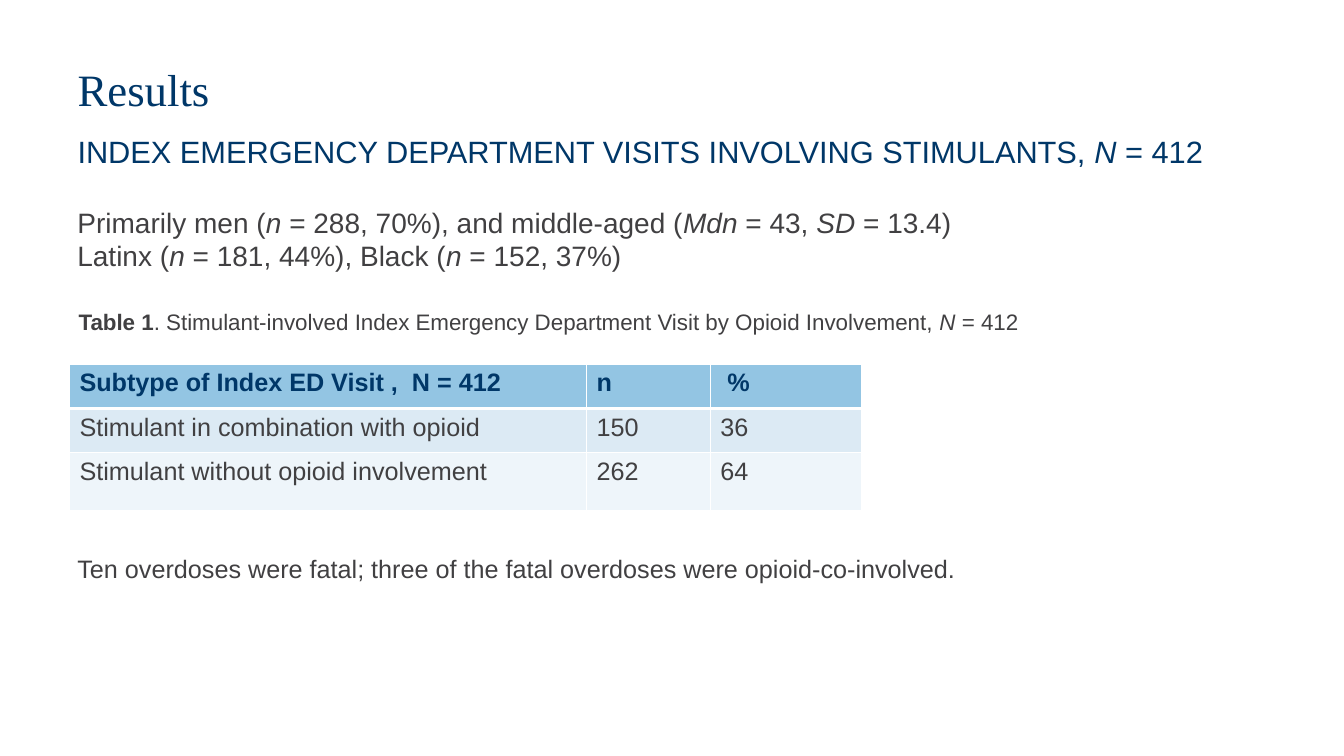
from lxml.etree import SubElement
from pptx import Presentation
from pptx.dml.color import RGBColor
from pptx.enum.text import MSO_ANCHOR, MSO_AUTO_SIZE, PP_ALIGN
from pptx.oxml.ns import qn
from pptx.util import Cm, Pt

COLORS = {
    "navy": "003768",
    "gray": "414042",
    "header": "93C5E3",
    "band_dark": "DCEAF4",
    "band_light": "EEF5FA",
    "border": "FFFFFF",
}
LEFT = 1.7
WIDTH = 30.48
COLUMN_WIDTHS = [13.03, 3.12, 3.81]
ROW_HEIGHTS = [1.12, 1.12, 1.45]
ROW_FILLS = ["header", "band_dark", "band_light"]
VISITS = [
    ["Subtype of Index ED Visit ,  N = 412", "n", " %"],
    ["Stimulant in combination with opioid", "150", "36"],
    ["Stimulant without opioid involvement", "262", "64"],
]


def rgb(name):
    return RGBColor.from_string(COLORS[name])


def style_font(font, size, color, face="Arial"):
    font.name = face
    font.size = Pt(size)
    font.color.rgb = rgb(color)


def place(shape, left, top, width, height):
    shape.left, shape.top = Cm(left), Cm(top)
    shape.width, shape.height = Cm(width), Cm(height)


def write_line(paragraph, marked, size, color):
    """Write one line in which asterisks enclose the italic parts."""
    for index, part in enumerate(marked.split("*")):
        if part:
            run = paragraph.add_run()
            run.text = part
            style_font(run.font, size, color)
            run.font.italic = index % 2 == 1


def add_title(slide, left, top, width, height):
    title = slide.shapes.title
    place(title, left, top, width, height)
    frame = title.text_frame
    frame.text = "Results"
    frame.auto_size = MSO_AUTO_SIZE.NONE
    frame.vertical_anchor = MSO_ANCHOR.MIDDLE
    heading = frame.paragraphs[0]
    heading.alignment = PP_ALIGN.LEFT
    heading.line_spacing = 0.8
    style_font(heading.runs[0].font, 32, "navy", "Times New Roman")


def add_subtitle(slide, left, top, width, height):
    subtitle = slide.placeholders[1]
    place(subtitle, left, top, width, height)
    frame = subtitle.text_frame
    frame.auto_size = MSO_AUTO_SIZE.NONE
    line = frame.paragraphs[0]
    properties = line._p.get_or_add_pPr()
    properties.set("marL", "0")
    properties.set("indent", "0")
    SubElement(properties, qn("a:buNone"))
    line.line_spacing = 0.8
    line.space_before = Pt(0)
    write_line(
        line,
        "INDEX EMERGENCY DEPARTMENT VISITS INVOLVING STIMULANTS, *N* = 412",
        22, "navy",
    )


def add_note(slide, left, top, width, height, lines, size):
    note = slide.shapes.add_textbox(Cm(left), Cm(top), Cm(width), Cm(height))
    frame = note.text_frame
    frame.word_wrap = True
    for index, line in enumerate(lines):
        paragraph = frame.add_paragraph() if index else frame.paragraphs[0]
        write_line(paragraph, line, size, "gray")
    return frame


def add_caption(slide, left, top, width, height):
    frame = add_note(
        slide, left, top, width, height,
        ["*Table 1*. Stimulant-involved Index Emergency Department Visit "
         "by Opioid Involvement, *N* = 412"],
        16,
    )
    label = frame.paragraphs[0].runs[0].font
    label.bold, label.italic = True, False


def set_borders(cell, widths):
    """Draw the cell's borders; widths maps L, R, T and B, in that order, to points."""
    properties = cell._tc.get_or_add_tcPr()
    for side, width in widths.items():
        line = SubElement(properties, qn(f"a:ln{side}"), w=str(Pt(width)))
        fill = SubElement(line, qn("a:solidFill"))
        SubElement(fill, qn("a:srgbClr"), val=COLORS["border"])


def add_visits_table(slide, left, top):
    table = slide.shapes.add_table(
        len(VISITS), len(COLUMN_WIDTHS), Cm(left), Cm(top),
        Cm(sum(COLUMN_WIDTHS)), Cm(sum(ROW_HEIGHTS)),
    ).table
    for column, width in zip(table.columns, COLUMN_WIDTHS):
        column.width = Cm(width)
    for r, (row, height) in enumerate(zip(table.rows, ROW_HEIGHTS)):
        row.height = Cm(height)
        is_header = r == 0
        borders = {"L": 1, "R": 1, "T": 3 if r == 1 else 1, "B": 3 if is_header else 1}
        for cell, value in zip(row.cells, VISITS[r]):
            set_borders(cell, borders)
            cell.fill.solid()
            cell.fill.fore_color.rgb = rgb(ROW_FILLS[r])
            cell.text_frame.text = value
            font = cell.text_frame.paragraphs[0].runs[0].font
            style_font(font, 18, "navy" if is_header else "gray")
            font.bold = is_header


def build_results(presentation):
    slide = presentation.slides.add_slide(presentation.slide_layouts[1])
    add_title(slide, LEFT, 1.68, WIDTH, 1.35)
    add_subtitle(slide, LEFT, 3.4, WIDTH, 1.02)
    add_visits_table(slide, LEFT + 0.05, 9.17)
    add_note(
        slide, LEFT, 5.05, 24.71, 1.96,
        ["Primarily men (*n* = 288, 70%), and middle-aged (*Mdn* = 43, *SD* = 13.4)",
         "Latinx (*n* = 181, 44%), Black (*n* = 152, 37%)"],
        20,
    )
    add_caption(slide, LEFT + 0.03, 7.65, 24.66, 0.94)
    add_note(
        slide, LEFT, 13.82, 22.68, 1.02,
        ["Ten overdoses were fatal; three of the fatal overdoses were opioid-co-involved."],
        18,
    )


def main():
    presentation = Presentation()
    presentation.slide_width = Cm(33.87)
    presentation.slide_height = Cm(19.05)
    build_results(presentation)
    presentation.save("out.pptx")


if __name__ == "__main__":
    main()
